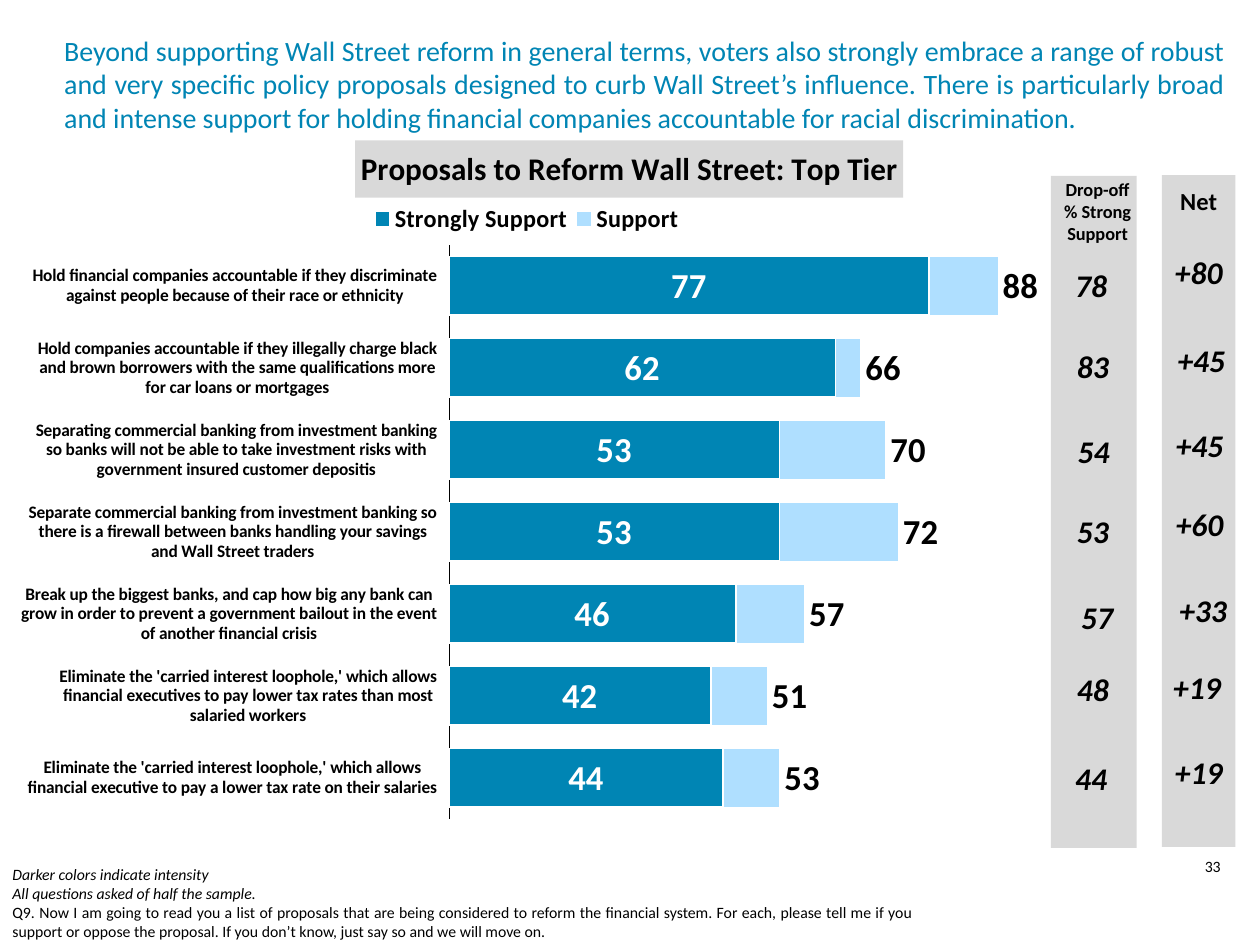
from copy import deepcopy

from lxml import etree
from pptx import Presentation
from pptx.chart.data import CategoryChartData
from pptx.dml.color import RGBColor
from pptx.enum.chart import XL_CHART_TYPE as CT, XL_LABEL_POSITION as LP
from pptx.enum.chart import XL_LEGEND_POSITION, XL_TICK_LABEL_POSITION, XL_TICK_MARK
from pptx.enum.shapes import MSO_SHAPE
from pptx.enum.text import MSO_ANCHOR, MSO_AUTO_SIZE, PP_ALIGN
from pptx.oxml.ns import qn
from pptx.util import Pt

BLUE = RGBColor(0x00, 0x85, 0xB4)
LIGHT = RGBColor(0xAF, 0xDF, 0xFF)
GREY = RGBColor(0xD9, 0xD9, 0xD9)
BLACK = RGBColor(0, 0, 0)
WHITE = RGBColor(0xFF, 0xFF, 0xFF)
FONT = "Calibri"

TITLE = (
    "Beyond supporting Wall Street reform in general terms, voters also strongly embrace "
    "a range of robust and very specific policy proposals designed to curb Wall Street’s "
    "influence. There is particularly broad and intense support for holding financial "
    "companies accountable for racial discrimination."
)
NOTES = [
    "Darker colors indicate intensity",
    "All questions asked of half the sample.",
    "Q9. Now I am going to read you a list of proposals that are being considered to reform "
    "the financial system. For each, please tell me if you support or oppose the proposal. "
    "If you don’t know, just say so and we will move on.",
]
# Proposal, total support, strong support
PROPOSALS = [
    ("Hold financial companies accountable if they discriminate against people because of "
     "their race or ethnicity", 88, 77),
    ("Hold companies accountable if they illegally charge black and brown borrowers with the "
     "same qualifications more for car loans or mortgages", 66, 62),
    ("Separating commercial banking from investment banking so banks will not be able to take "
     "investment risks with government insured customer depositis", 70, 53),
    ("Separate commercial banking from investment banking so there is a firewall between banks "
     "handling your savings and Wall Street traders", 72, 53),
    ("Break up the biggest banks, and cap how big any bank can grow in order to prevent a "
     "government bailout in the event of another financial crisis", 57, 46),
    ("Eliminate the 'carried interest loophole,' which allows financial executives to pay lower "
     "tax rates than most salaried workers", 51, 42),
    ("Eliminate the 'carried interest loophole,' which allows financial executive to pay a "
     "lower tax rate on their salaries", 53, 44),
]
# Value, left, top
NET = [("+80", 664, 144.5), ("+45", 665.5, 195), ("+45", 664.5, 243.5), ("+60", 664.5, 288.5),
       ("+33", 666.5, 337.5), ("+19", 663, 381.5), ("+19", 664, 430.5)]
DROP_OFF = [("78", 602.5, 152), ("83", 603.5, 198.5), ("54", 604, 247), ("53", 603.5, 292.5),
            ("57", 606, 341.5), ("48", 603.5, 383), ("44", 602.5, 433.5)]


def set_font(font, size, color=BLACK, bold=False, italic=False):
    font.name, font.size, font.bold, font.italic = FONT, Pt(size), bold, italic
    font.color.rgb = color


def place(successor, x, y, w=None, h=None, inner=False):
    """Insert a manual chart layout before the given element."""
    parent = successor.getparent()
    for old in parent.findall(qn("c:layout")):
        parent.remove(old)
    layout = etree.Element(qn("c:layout"))
    manual = etree.SubElement(layout, qn("c:manualLayout"))
    items = [("layoutTarget", "inner")] if inner else []
    items += [("xMode", "edge"), ("yMode", "edge"), ("x", x), ("y", y), ("w", w), ("h", h)]
    for tag, val in items:
        if val is not None:
            etree.SubElement(manual, qn("c:" + tag)).set("val", str(val))
    successor.addprevious(layout)


def split_to_second_axes(bars):
    """Move the last series to a second bar group on hidden axes."""
    second = deepcopy(bars)
    bars.remove(bars.findall(qn("c:ser"))[1])
    second.remove(second.findall(qn("c:ser"))[0])
    bars.addnext(second)
    area = bars.getparent()
    axes = [area.find(qn("c:catAx")), area.find(qn("c:valAx"))]
    ids = {ax.find(qn("c:axId")).get("val"): str(5001 + i) for i, ax in enumerate(axes)}
    copies = [deepcopy(ax) for ax in axes]
    for ax in reversed(copies):
        axes[-1].addnext(ax)
        ax.find(qn("c:delete")).set("val", "1")
    for root in [second] + copies:
        for el in root.iter(qn("c:axId"), qn("c:crossAx")):
            el.set("val", ids[el.get("val")])


class SlideMaker:
    def __init__(self, prs):
        self.s = prs.slides.add_slide(prs.slide_layouts[5])

    def title(self, text, box):
        sp = self.s.shapes.title
        sp.left, sp.top, sp.width, sp.height = map(Pt, box)
        tf = sp.text_frame
        tf.text, tf.word_wrap = text, True
        tf.auto_size, tf.vertical_anchor = MSO_AUTO_SIZE.NONE, MSO_ANCHOR.MIDDLE
        p = tf.paragraphs[0]
        p.alignment = PP_ALIGN.JUSTIFY
        set_font(p.runs[0].font, 16, BLUE)

    def text(self, lines, box, size, align=PP_ALIGN.CENTER, bold=False, italics=(False,),
             inset=True, parent=None):
        sp = (parent or self.s).shapes.add_textbox(*map(Pt, box))
        tf = sp.text_frame
        tf.word_wrap = True
        if not inset:
            tf.margin_left = tf.margin_right = tf.margin_top = tf.margin_bottom = 0
        tf.text = "\n".join(lines)
        for i, p in enumerate(tf.paragraphs):
            p.alignment = align
            set_font(p.runs[0].font, size, bold=bold, italic=italics[i % len(italics)])

    def column(self, panel, heading, head_box, head_size, values, parent=None):
        sp = (parent or self.s).shapes.add_shape(MSO_SHAPE.RECTANGLE, *map(Pt, panel))
        sp.shadow.inherit = False
        sp.fill.solid()
        sp.fill.fore_color.rgb = GREY
        sp.line.fill.background()
        self.text(heading, head_box, head_size, bold=True, inset=False, parent=parent)
        for value, x, y in values:
            self.text([value], (x, y, 42, 21.5), 18, bold=True, italics=(True,),
                      inset=False, parent=parent)

    def series(self, ser, color, line, label_color, position):
        ser.format.fill.solid()
        ser.format.fill.fore_color.rgb = color
        ser.format.line.color.rgb = WHITE
        ser.format.line.width = Pt(line)
        labels = ser.data_labels
        labels.show_value, labels.position = True, position
        labels.number_format, labels.number_format_is_linked = "0", False
        set_font(labels.font, 20, label_color, bold=True)

    def chart(self, title, rows, box):
        names, support, strong = zip(*rows)
        data = CategoryChartData(number_format="0")
        data.categories = names
        data.add_series("Support", support)
        data.add_series("Strongly Support", strong)
        chart = self.s.shapes.add_chart(CT.BAR_CLUSTERED, *map(Pt, box), data).chart
        chart.font.name, chart.font.size = "Arial", Pt(11)

        # Title and legend
        chart.has_title = True
        heading = chart.chart_title
        heading.text_frame.text = title
        set_font(heading.text_frame.paragraphs[0].runs[0].font, 18, bold=True)
        heading.format.fill.solid()
        heading.format.fill.fore_color.rgb = GREY
        chart.has_legend = True
        legend = chart.legend
        legend.position, legend.include_in_layout = XL_LEGEND_POSITION.TOP, False
        set_font(legend.font, 14, bold=True)

        # Axes
        cat, val = chart.category_axis, chart.value_axis
        cat.reverse_order = True
        cat.major_tick_mark = cat.minor_tick_mark = XL_TICK_MARK.NONE
        cat.tick_label_position = XL_TICK_LABEL_POSITION.LOW
        set_font(cat.tick_labels.font, 10, bold=True)
        cat.format.line.color.rgb = BLACK
        cat.format.line.width = Pt(0.25)
        val.minimum_scale, val.maximum_scale = 0, 100
        val.has_major_gridlines = val.visible = False

        # Bars: strong support lies over total support
        plot = chart.plots[0]
        plot.gap_width, plot.overlap, plot.vary_by_categories = 40, 100, False
        self.series(plot.series[0], LIGHT, 0.25, BLACK, LP.OUTSIDE_END)
        self.series(plot.series[1], BLUE, 1.05, WHITE, LP.CENTER)
        root = chart.element
        bars = next(root.iter(qn("c:barChart")))
        split_to_second_axes(bars)
        place(bars, 0.4, 0.19, 0.6, 0.77, inner=True)
        place(next(root.iter(qn("c:title"))).find(qn("c:overlay")), 0.31, 0.05)
        place(next(root.iter(qn("c:legend"))).find(qn("c:overlay")), 0.32, 0.13, 0.31, 0.05)


def main():
    prs = Presentation()
    prs.slide_width, prs.slide_height = Pt(720), Pt(540)
    maker = SlideMaker(prs)

    # Title, page number, chart and notes
    maker.title(TITLE, (29.5, 6, 678, 83.5))
    maker.text(["33"], (666, 486, 54, 24), 9)
    maker.chart("Proposals to Reform Wall Street: Top Tier", PROPOSALS, (12, 59, 601, 426))
    maker.text(NOTES, (0, 490.5, 528, 51), 9, PP_ALIGN.JUSTIFY, italics=(True, True, False))

    # Side columns
    group = maker.s.shapes.add_group_shape()
    maker.column((664, 100, 42, 384), ["Net"], (664, 106.5, 42, 17), 14, NET, group)
    maker.column((600.5, 100.5, 49, 384), ["Drop-off", "% Strong Support"],
                 (601, 102, 52.5, 38), 10.5, DROP_OFF)

    prs.save("out.pptx")


if __name__ == "__main__":
    main()
